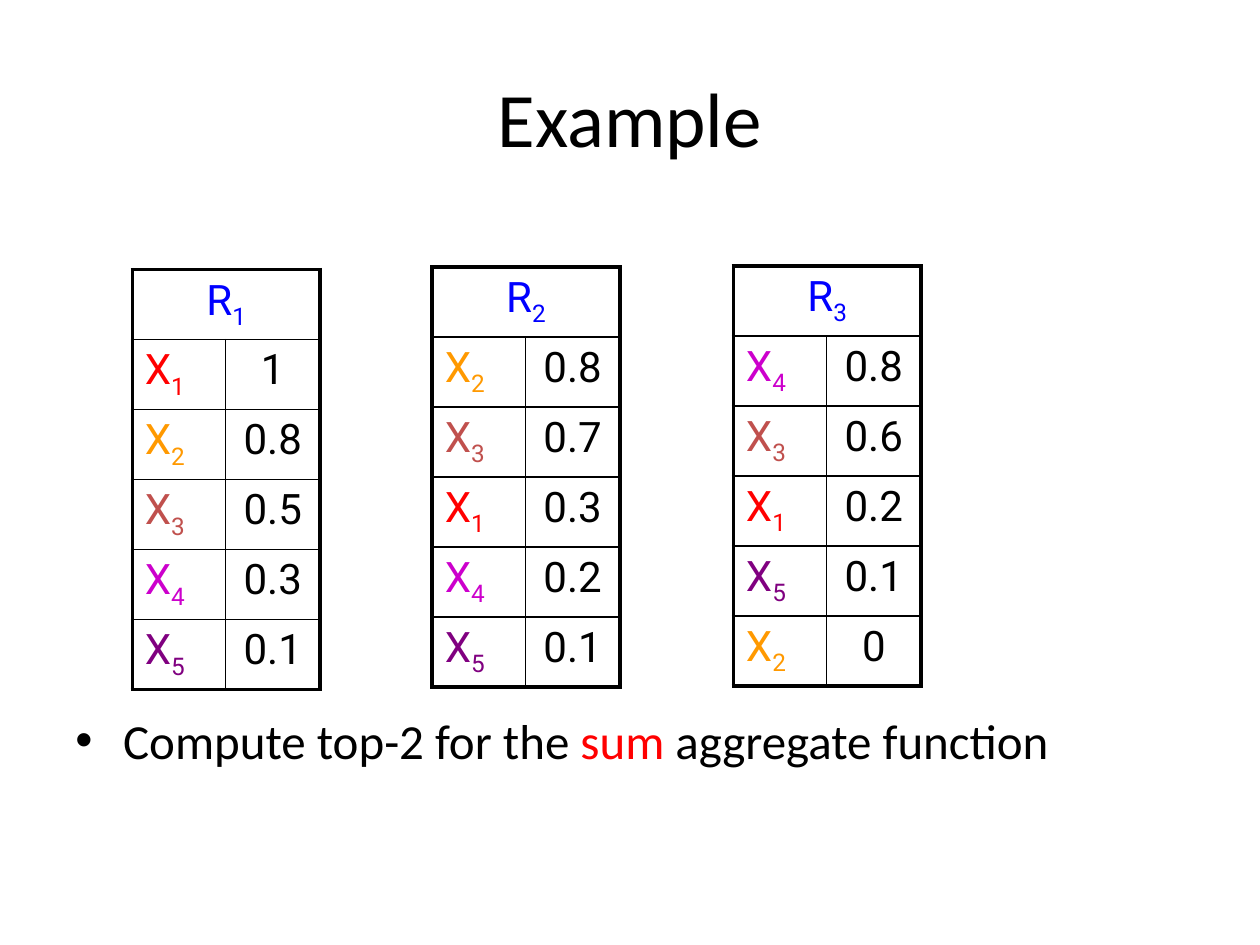
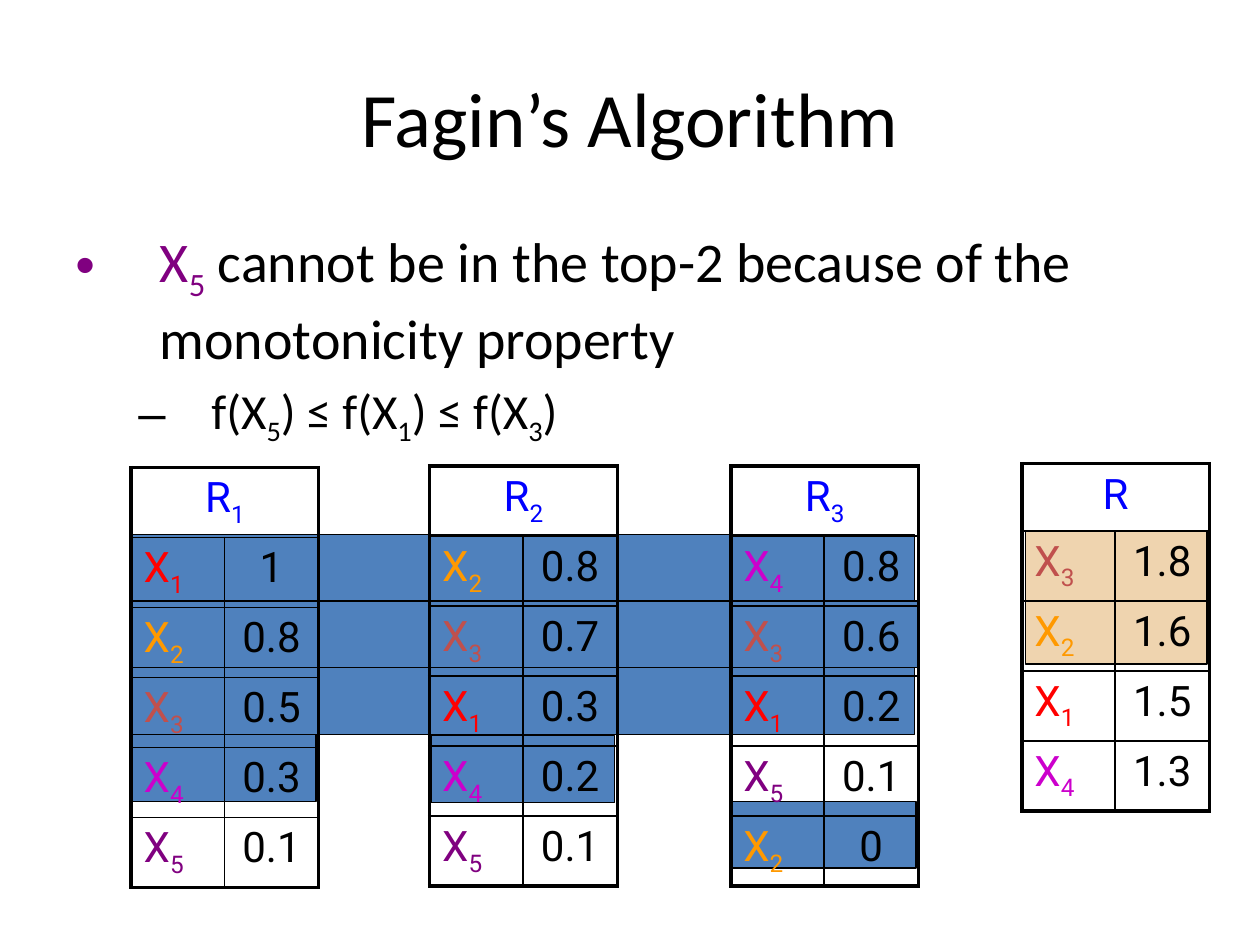
from lxml import etree
from pptx import Presentation
from pptx.dml.color import RGBColor
from pptx.enum.shapes import MSO_SHAPE
from pptx.enum.text import MSO_ANCHOR, PP_ALIGN
from pptx.oxml.ns import qn
from pptx.util import Inches, Pt

RECTANGLE = MSO_SHAPE.RECTANGLE
MIDDLE = MSO_ANCHOR.MIDDLE
LEFT, CENTER = PP_ALIGN.LEFT, PP_ALIGN.CENTER

COLORS = {
    "text": "000000", "header": "0000FF", "accent": "FF0000",
    "band": "4F81BD", "answer": "EFD4AF",
    "X1": "FF0000", "X2": "FF9900", "X3": "C0504D", "X4": "CC00CC", "X5": "800080",
}
TITLE_FONT = {"name": "Calibri", "size": Pt(44)}
TABLE_FONT = {"name": "Roboto", "size": Pt(24)}
THICK, THIN = 2.25, 1

# The page is a grid of 100 columns by 75 rows.
GRID_COLUMNS, GRID_ROWS = 100, 75
TITLE_AREA = (5, 3, 90, 12.5)
TABLE_COLUMNS = (7.4, 7.5)
TABLE_ROW = 5.34
BAND_ROW = 5.3

RANKINGS = {
    "R1": {"X1": "1", "X2": "0.8", "X3": "0.5", "X4": "0.3", "X5": "0.1"},
    "R2": {"X2": "0.8", "X3": "0.7", "X1": "0.3", "X4": "0.2", "X5": "0.1"},
    "R3": {"X4": "0.8", "X3": "0.6", "X1": "0.2", "X5": "0.1", "X2": "0"},
}
TOTALS = {"X3": "1.8", "X2": "1.6", "X1": "1.5", "X4": "1.3"}


def indexed(name, color):
    """Split a name such as X1 into a letter and its subscript."""
    return [(name[0], color)] + [(digit, color, True) for digit in name[1:]]


def set_borders(cell, widths):
    """Draw the left, right, top and bottom borders, given in points."""
    properties = cell._tc.get_or_add_tcPr()
    for side, width in zip("LRTB", widths):
        line = etree.SubElement(properties, qn(f"a:ln{side}"), w=str(Pt(width)))
        fill = etree.SubElement(line, qn("a:solidFill"))
        etree.SubElement(fill, qn("a:srgbClr"), val=COLORS["text"])


class SlideBuilder:
    def __init__(self):
        self.deck = Presentation()
        self.deck.slide_width, self.deck.slide_height = Inches(10), Inches(7.5)
        self.page = None

    def across(self, columns):
        return round(self.deck.slide_width * columns / GRID_COLUMNS)

    def down(self, rows):
        return round(self.deck.slide_height * rows / GRID_ROWS)

    def area(self, left, top, width, height):
        return self.across(left), self.down(top), self.across(width), self.down(height)

    def add_spans(self, para, spans, font, align=LEFT):
        """Add spans given as (text, colour name, optional subscript flag)."""
        para.alignment = align
        for text, color, *subscript in spans:
            span = para.add_run()
            span.text = text
            for key, value in font.items():
                setattr(span.font, key, value)
            span.font.color.rgb = RGBColor.from_string(COLORS[color])
            if subscript:
                span._r.get_or_add_rPr().set("baseline", "-25000")

    def add_page(self, title):
        self.page = self.deck.slides.add_slide(self.deck.slide_layouts[5])
        box = self.page.shapes.title
        box.left, box.top, box.width, box.height = self.area(*TITLE_AREA)
        box.text_frame.vertical_anchor = MIDDLE
        self.add_spans(box.text_frame.paragraphs[0], [(title, "text")], TITLE_FONT, CENTER)

    def add_bullets(self, area, items):
        """Add items given as (bullet, size, margin, hanging indent, spans)."""
        frame = self.page.shapes.add_textbox(*self.area(*area)).text_frame
        frame.word_wrap = True
        for number, (bullet, size, margin, hanging, spans) in enumerate(items):
            para = frame.add_paragraph() if number else frame.paragraphs[0]
            if number:
                para.space_before = Pt(size * 0.2)
            self.add_spans(para, spans, {"name": "Calibri", "size": Pt(size)})
            properties = para._p.get_or_add_pPr()
            properties.set("marL", str(self.across(margin)))
            properties.set("indent", str(-self.across(hanging)))
            etree.SubElement(properties, qn("a:buFont"), typeface="Arial")
            etree.SubElement(properties, qn("a:buChar"), char=bullet)

    def add_highlight(self, area, color):
        box = self.page.shapes.add_shape(RECTANGLE, *self.area(*area))
        box.shadow.inherit = False
        box.fill.solid()
        box.fill.fore_color.rgb = RGBColor.from_string(COLORS[color])
        box.line.color.rgb = RGBColor.from_string(COLORS["text"])
        box.line.width = Pt(0.75)

    def add_ranking(self, left, top, name, scores):
        count = len(scores) + 1
        area = self.area(left, top, sum(TABLE_COLUMNS), TABLE_ROW * count)
        table = self.page.shapes.add_table(count, len(TABLE_COLUMNS), *area).table
        table.first_row = table.horz_banding = False
        for column, width in zip(table.columns, TABLE_COLUMNS):
            column.width = self.across(width)
        for row in table.rows:
            row.height = self.down(TABLE_ROW)

        table.cell(0, 0).merge(table.cell(0, 1))
        self.add_spans(table.cell(0, 0).text_frame.paragraphs[0],
                       indexed(name, "header"), TABLE_FONT, CENTER)
        for number, (item, score) in enumerate(scores.items(), 1):
            self.add_spans(table.cell(number, 0).text_frame.paragraphs[0],
                           indexed(item, item), TABLE_FONT)
            self.add_spans(table.cell(number, 1).text_frame.paragraphs[0],
                           [(score, "text")], TABLE_FONT, CENTER)

        for number in range(count):
            top_line = THIN if number else THICK
            bottom_line = THICK if number == count - 1 else THIN
            middle_line = THIN if number else THICK
            sides = ((THICK, middle_line), (middle_line, THICK))
            for column, (left_line, right_line) in enumerate(sides):
                cell = table.cell(number, column)
                set_borders(cell, (left_line, right_line, top_line, bottom_line))
                cell.fill.background()

    def add_rankings(self, corners):
        for (left, top), (name, scores) in zip(corners, RANKINGS.items()):
            self.add_ranking(left, top, name, scores)


def add_example(builder):
    builder.add_page("Example")
    builder.add_bullets((5, 55.9, 90, 6), [
        ("•", 28, 3.8, 3.8, [("Compute top-2 for the ", "text"), ("sum", "accent"),
                             (" aggregate function", "text")]),
    ])
    builder.add_rankings([(10.5, 21.4), (34.3, 21.2), (58.2, 21.1)])


def add_fagin(builder):
    builder.add_page("Fagin’s Algorithm")
    builder.add_highlight((81.4, 42.1, 14.4, 10.6), "answer")
    for left, top in ((34.2, 58.4), (58.1, 63.6), (10.5, 58.3)):
        builder.add_highlight((left, top, 14.6, BAND_ROW), "band")
    for number, left in ((2, 10.3), (1, 10.5), (0, 10.3)):
        top = 42.4 + number * BAND_ROW
        builder.add_highlight((left, top, 62.3, BAND_ROW), "band")

    comparison = [("f(", "text")]
    for item, ending in (("X5", ") ≤ f("), ("X1", ") ≤ f("), ("X3", ")")):
        comparison += indexed(item, "text") + [(ending, "text")]
    reason = " cannot be in the top-2 because of the monotonicity property"
    builder.add_bullets((5, 17.5, 90, 19), [
        ("•", 32, 6.7, 6.7, indexed("X5", "X5") + [(reason, "text")]),
        ("–", 28, 10.8, 5.8, comparison),
    ])
    builder.add_rankings([(10.4, 37.1), (34.1, 37), (58, 37)])
    builder.add_ranking(81.1, 36.8, "R", TOTALS)


def main():
    builder = SlideBuilder()
    add_example(builder)
    add_fagin(builder)
    builder.deck.save("out.pptx")


if __name__ == "__main__":
    main()
